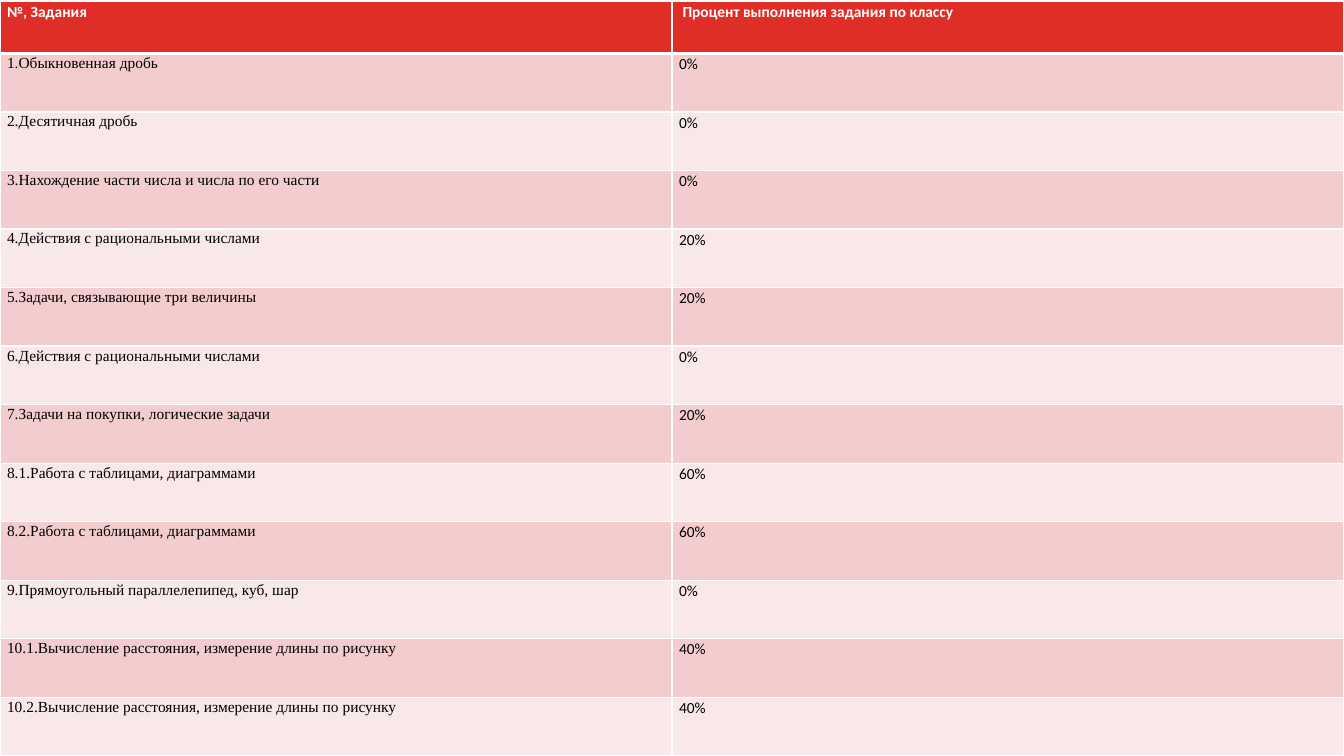
from dataclasses import dataclass

from lxml.etree import SubElement
from pptx import Presentation
from pptx.dml.color import RGBColor
from pptx.oxml.ns import qn
from pptx.util import Inches, Pt


@dataclass(frozen=True)
class Theme:
    background: str = "000000"
    header: str = "DF2E28"
    bands: tuple = ("F3CDCD", "F9E8E8")
    border: str = "FFFFFF"
    header_text: str = "FFFFFF"
    body_text: str = "000000"
    task_font: str = "Times New Roman"
    font: str = "Calibri"
    size: int = 11
    thin: int = 1
    thick: int = 3


theme = Theme()

HEADINGS = ("№, Задания", " Процент выполнения задания по классу")
RESULTS = [
    ("1.Обыкновенная дробь", 0),
    ("2.Десятичная дробь", 0),
    ("3.Нахождение части числа и числа по его части", 0),
    ("4.Действия с рациональными числами", 20),
    ("5.Задачи, связывающие три величины", 20),
    ("6.Действия с рациональными числами", 0),
    ("7.Задачи на покупки, логические задачи", 20),
    ("8.1.Работа с таблицами, диаграммами", 60),
    ("8.2.Работа с таблицами, диаграммами", 60),
    ("9.Прямоугольный параллелепипед, куб, шар", 0),
    ("10.1.Вычисление расстояния, измерение длины по рисунку", 40),
    ("10.2.Вычисление расстояния, измерение длины по рисунку", 40),
]


def add_border(cell, side, width):
    line = SubElement(cell._tc.get_or_add_tcPr(), qn(f"a:ln{side}"), w=str(Pt(width)))
    fill = SubElement(line, qn("a:solidFill"))
    SubElement(fill, qn("a:srgbClr"), val=theme.border)


# Slide
presentation = Presentation()
presentation.slide_width = Inches(13.33)
presentation.slide_height = Inches(7.5)
slide = presentation.slides.add_slide(presentation.slide_layouts[6])
slide.background.fill.solid()
slide.background.fill.fore_color.rgb = RGBColor.from_string(theme.background)

# Results table: a short header above equal rows
rows = [HEADINGS] + [(task, f"{percent}%") for task, percent in RESULTS]
results = slide.shapes.add_table(
    len(rows), len(HEADINGS), Inches(0), Inches(0.01), Inches(13.33), Inches(7.49)
).table
for column in results.columns:
    column.width = Inches(13.33 / len(HEADINGS))
header_height = 0.52
for row_index, row in enumerate(results.rows):
    body_height = (7.49 - header_height) / len(RESULTS)
    row.height = Inches(body_height if row_index else header_height)

# Cells: red header, alternating pink rows
for row_index, texts in enumerate(rows):
    is_header = row_index == 0
    fill_color = theme.header if is_header else theme.bands[(row_index - 1) % 2]
    text_color = theme.header_text if is_header else theme.body_text
    for column_index, text in enumerate(texts):
        cell = results.cell(row_index, column_index)
        cell.margin_left = cell.margin_right = Inches(0.07)
        cell.margin_top = cell.margin_bottom = Inches(0)
        for side in "LRTB":
            under_header = (row_index, side) in ((0, "B"), (1, "T"))
            add_border(cell, side, theme.thick if under_header else theme.thin)
        cell.fill.solid()
        cell.fill.fore_color.rgb = RGBColor.from_string(fill_color)

        paragraph = cell.text_frame.paragraphs[0]
        paragraph.text = text
        paragraph.line_spacing = 1.07
        is_task = column_index == 0 and not is_header
        font = paragraph.runs[0].font
        font.name = theme.task_font if is_task else theme.font
        font.size = Pt(theme.size)
        font.bold = is_header
        font.color.rgb = RGBColor.from_string(text_color)

presentation.save("out.pptx")
